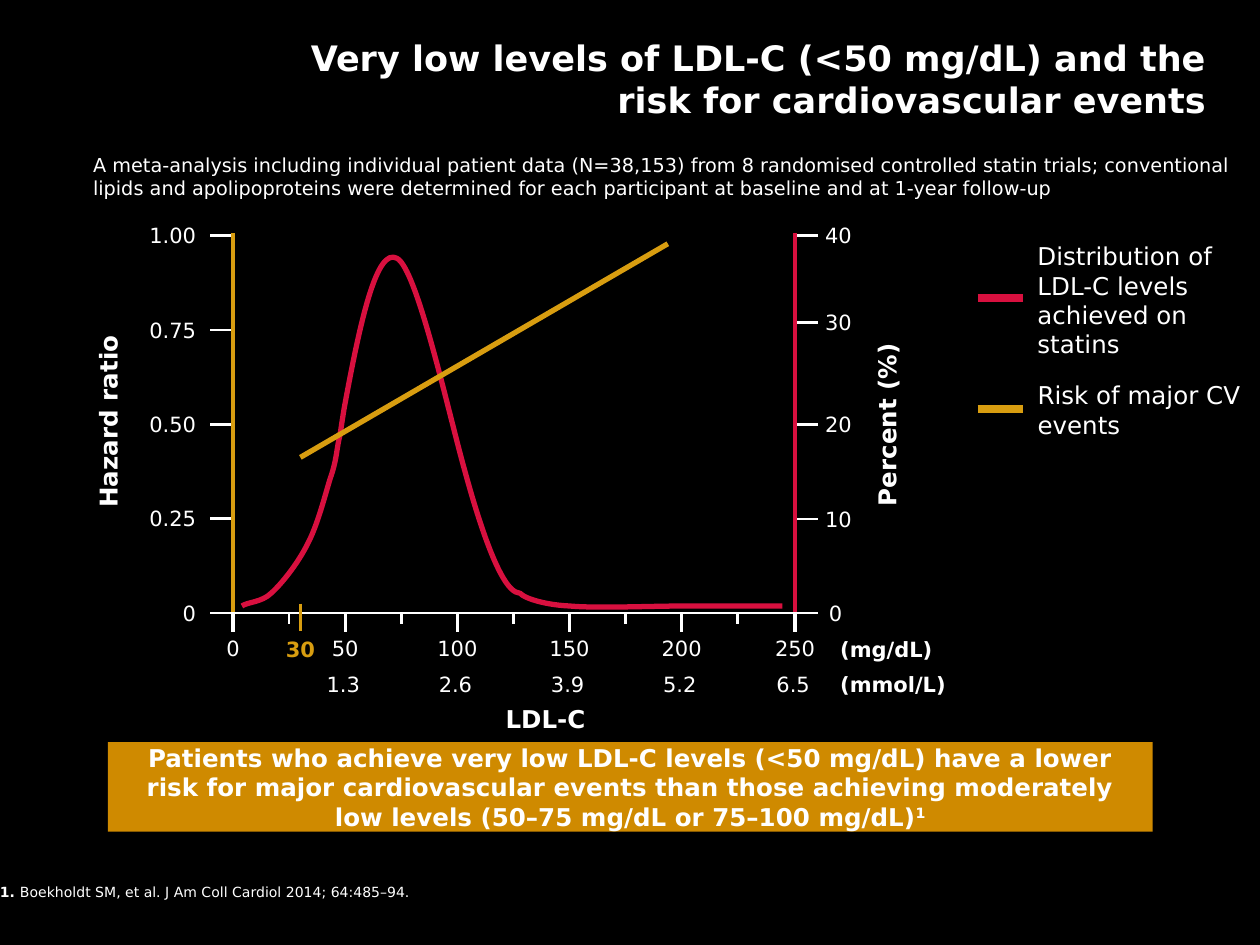
from lxml.etree import SubElement
from pptx import Presentation
from pptx.dml.color import RGBColor
from pptx.enum.shapes import MSO_CONNECTOR, MSO_SHAPE
from pptx.enum.text import MSO_ANCHOR, MSO_AUTO_SIZE, PP_ALIGN
from pptx.oxml.ns import qn
from pptx.util import Inches, Pt

BLACK = RGBColor(0x00, 0x00, 0x00)
WHITE = RGBColor(0xFF, 0xFF, 0xFF)
RED = RGBColor(0xD8, 0x10, 0x3F)
GOLD = RGBColor(0xD8, 0x9D, 0x10)
AMBER = RGBColor(0xCF, 0x8A, 0x00)
FONT = "DejaVu Sans"

# The slide is a grid of 100 columns by 75 rows; every length counts these cells.
COLUMNS, ROWS = 100, 75
WIDTH, HEIGHT = Inches(10), Inches(7.5)
PLOT_LEFT, PLOT_RIGHT = 18.5, 63.1
PLOT_TOP, PLOT_BOTTOM = 18.7, 48.65
LDL_MAX, LDL_STEP, LDL_COLUMNS = 250, 25, 4.45
TICK = 1.8
LABEL_HEIGHT = 3

HAZARD_RATIOS = ["0", "0.25", "0.50", "0.75", "1.00"]
PERCENTS = [("0", 48.65), ("10", 41.2), ("20", 33.7), ("30", 25.6), ("40", 18.7)]
MMOL = {50: "1.3", 100: "2.6", 150: "3.9", 200: "5.2", 250: "6.5"}

CURVE_START = (19.2, 48.1)
CURVE = [
    ((19.6, 47.8), (20.8, 47.8), (21.5, 47.1)),
    ((22.3, 46.4), (23.6, 44.8), (24.4, 43.2)),
    ((25.2, 41.7), (25.8, 39.3), (26.2, 38.0)),
    ((26.7, 36.6), (26.7, 35.8), (26.9, 34.9)),
    ((27.1, 34.0), (26.9, 35.0), (27.3, 32.5)),
    ((28.6, 25.4), (29.9, 19.6), (31.5, 20.5)),
    ((33.1, 21.3), (35.6, 32.8), (36.9, 37.4)),
    ((39.8, 48.0), (41.1, 46.9), (41.3, 47.1)),
    ((41.5, 47.4), (43.0, 48.0), (45.2, 48.1)),
    ((47.4, 48.3), (51.6, 48.1), (54.4, 48.1)),
    ((57.0, 48.1), (59.5, 48.1), (62.1, 48.1)),
]


def column(count):
    return round(WIDTH * count / COLUMNS)


def row(count):
    return round(HEIGHT * count / ROWS)


def box(left, top, width, height):
    return column(left), row(top), column(width), row(height)


def ldl_column(level):
    if level == LDL_MAX:
        return PLOT_RIGHT
    return PLOT_LEFT + LDL_COLUMNS * level / LDL_STEP


def label_width(label, bold):
    """Width of a 12 pt label with its side insets, in columns."""
    digit = 1.25 if bold else 1.08
    return 2 + sum(0.55 if letter == "." else digit for letter in label)


def fill_text(frame, paragraphs, size, align=PP_ALIGN.LEFT, bold=False, color=WHITE):
    """Write paragraphs, each a list of (text, run format) pairs."""
    for index, runs in enumerate(paragraphs):
        paragraph = frame.paragraphs[0] if index == 0 else frame.add_paragraph()
        paragraph.alignment = align
        for text, run_format in runs:
            run = paragraph.add_run()
            run.text = text
            run.font.color.rgb = color
            values = {"name": FONT, "size": Pt(size), "bold": bold} | run_format
            for name, value in values.items():
                setattr(run.font, name, value)


def add_text(slide, place, paragraphs, size, wrap=True, rotation=0, frame_format=None, **style):
    if isinstance(paragraphs, str):
        paragraphs = [[(paragraphs, {})]]
    shape = slide.shapes.add_textbox(*box(*place))
    shape.rotation = rotation
    values = {"word_wrap": wrap, "auto_size": MSO_AUTO_SIZE.SHAPE_TO_FIT_TEXT}
    for name, value in (values | (frame_format or {})).items():
        setattr(shape.text_frame, name, value)
    fill_text(shape.text_frame, paragraphs, size, **style)


def add_label(slide, label, anchor, top, align=PP_ALIGN.CENTER, bold=False, color=WHITE):
    """Place a scale label whose left edge, centre or right edge is at anchor."""
    width = label_width(label, bold)
    share = {PP_ALIGN.LEFT: 0, PP_ALIGN.CENTER: 0.5, PP_ALIGN.RIGHT: 1}[align]
    place = (anchor - width * share, top, width, LABEL_HEIGHT)
    add_text(slide, place, label, 12, wrap=False, align=align, bold=bold, color=color)


def add_line(slide, start, end, color=WHITE, weight=1.5):
    line = slide.shapes.add_connector(
        MSO_CONNECTOR.STRAIGHT,
        column(start[0]), row(start[1]), column(end[0]), row(end[1]))
    line.line.color.rgb = color
    line.line.width = Pt(weight)
    SubElement(line._element.spPr, qn("a:effectLst"))


def add_curve(slide):
    """Draw a freeform through the knots, then bend its segments into Bezier curves."""
    builder = slide.shapes.build_freeform(column(CURVE_START[0]), row(CURVE_START[1]))
    builder.add_line_segments([(column(x), row(y)) for *_, (x, y) in CURVE], close=False)
    shape = builder.convert_to_shape()
    for segment, points in zip(list(shape._element.iter(qn("a:lnTo"))), CURVE):
        segment.tag = qn("a:cubicBezTo")
        for child in list(segment):
            segment.remove(child)
        for x, y in points:
            SubElement(segment, qn("a:pt"), x=str(column(x) - shape.left),
                       y=str(row(y) - shape.top))
    shape.shadow.inherit = False
    shape.fill.background()
    shape.line.color.rgb = RED
    shape.line.width = Pt(3)


def add_vertical_scales(slide):
    spacing = (PLOT_BOTTOM - PLOT_TOP) / (len(HAZARD_RATIOS) - 1)
    for index, label in enumerate(HAZARD_RATIOS):
        y = PLOT_BOTTOM - index * spacing
        add_line(slide, (PLOT_LEFT - TICK, y), (PLOT_LEFT, y))
        add_label(slide, label, 16.55, y - LABEL_HEIGHT / 2, PP_ALIGN.RIGHT)
    for label, y in PERCENTS:
        add_line(slide, (PLOT_RIGHT, y), (PLOT_RIGHT + TICK, y))
        left = 64.8 if label == "0" else 64.5
        add_label(slide, label, left, y - LABEL_HEIGHT / 2, PP_ALIGN.LEFT)
    for x, color in ((PLOT_LEFT, GOLD), (PLOT_RIGHT, RED)):
        add_line(slide, (x, 49), (x, 18.5), color, 2.25)
    titles = ((-5.2, 31.75, 27.6, "Hazard ratio"), (57.7, 32, 25.4, "Percent (%)"))
    for left, top, width, title in titles:
        add_text(slide, (left, top, width, 3.4), title, 14,
                 rotation=270, align=PP_ALIGN.CENTER, bold=True)


def add_ldl_scale(slide):
    add_line(slide, (PLOT_LEFT, PLOT_BOTTOM), (PLOT_RIGHT, PLOT_BOTTOM))
    for level in range(0, LDL_MAX + 1, LDL_STEP):
        x = ldl_column(level)
        major = level % (2 * LDL_STEP) == 0
        weight = 2.25 if level in (0, LDL_MAX) else 1.5
        add_line(slide, (x, 48.6), (x, 50.2 if major else 49.5), weight=weight)
        if major:
            add_label(slide, str(level), x, 49.95)
        if level in MMOL:
            add_label(slide, MMOL[level], x - 0.15, 52.8)
    x = ldl_column(30)
    add_line(slide, (x, 47.9), (x, 50.1), GOLD)
    add_label(slide, "30", x, 50, bold=True, color=GOLD)
    for unit, top in (("(mg/dL)", 50), ("(mmol/L)", 52.8)):
        add_text(slide, (65.7, top, 15, LABEL_HEIGHT), unit, 12, bold=True)
    add_text(slide, (23.5, 55.4, 39.6, 3.4), "LDL-C", 14, align=PP_ALIGN.CENTER, bold=True)


def add_legend(slide):
    entries = [
        (RED, 23.65, (81.36, 18.65, 18.6, 10.4),
         ["Distribution of LDL-C levels", "achieved on statins"]),
        (GOLD, 32.45, (81.36, 29.7, 20.2, 5.7), ["Risk of major CV events"]),
    ]
    for color, y, place, lines in entries:
        add_line(slide, (77.6, y), (81.2, y), color, 4.5)
        add_text(slide, place, [[(line, {})] for line in lines], 14)


def add_conclusion(slide):
    shape = slide.shapes.add_shape(MSO_SHAPE.RECTANGLE, *box(8.57, 58.9, 82.9, 7.1))
    shape.shadow.inherit = False
    shape.fill.solid()
    shape.fill.fore_color.rgb = AMBER
    shape.line.fill.background()
    frame = shape.text_frame
    for name, value in {"word_wrap": True, "vertical_anchor": MSO_ANCHOR.MIDDLE}.items():
        setattr(frame, name, value)
    text = ("Patients who achieve very low LDL-C levels (<50 mg/dL) have a lower risk for "
            "major cardiovascular events than those achieving moderately low levels "
            "(50–75 mg/dL or 75–100 mg/dL)")
    fill_text(frame, [[(text, {}), ("1", {})]], 14, align=PP_ALIGN.CENTER, bold=True)
    frame.paragraphs[0].runs[-1]._r.get_or_add_rPr().set("baseline", "30000")


def main():
    presentation = Presentation()
    presentation.slide_width, presentation.slide_height = WIDTH, HEIGHT
    slide = presentation.slides.add_slide(presentation.slide_layouts[6])
    slide.background.fill.solid()
    slide.background.fill.fore_color.rgb = BLACK

    add_text(slide, (17.13, 0, 79.6, 12.5),
             "Very low levels of LDL-C (<50 mg/dL) and the risk for cardiovascular events",
             20, align=PP_ALIGN.RIGHT, bold=True,
             frame_format={"auto_size": MSO_AUTO_SIZE.NONE,
                           "vertical_anchor": MSO_ANCHOR.MIDDLE})
    add_text(slide, (6.4, 11.65, 93.6, 4.7),
             "A meta-analysis including individual patient data (N=38,153) from 8 randomised "
             "controlled statin trials; conventional lipids and apolipoproteins were determined "
             "for each participant at baseline and at 1-year follow-up", 11)
    add_vertical_scales(slide)
    add_ldl_scale(slide)
    add_curve(slide)
    add_line(slide, (ldl_column(30), 36.3), (53, 19.35), GOLD, 3)
    add_legend(slide)
    add_conclusion(slide)
    margins = ("margin_left", "margin_top", "margin_right", "margin_bottom")
    add_text(slide, (0, 70.1, 45, 1.3),
             [[("1. ", {"bold": True}),
               ("Boekholdt SM, et al. J Am Coll Cardiol 2014; 64:485–94.", {})]],
             8, frame_format=dict.fromkeys(margins, 0))
    presentation.save("out.pptx")


if __name__ == "__main__":
    main()
